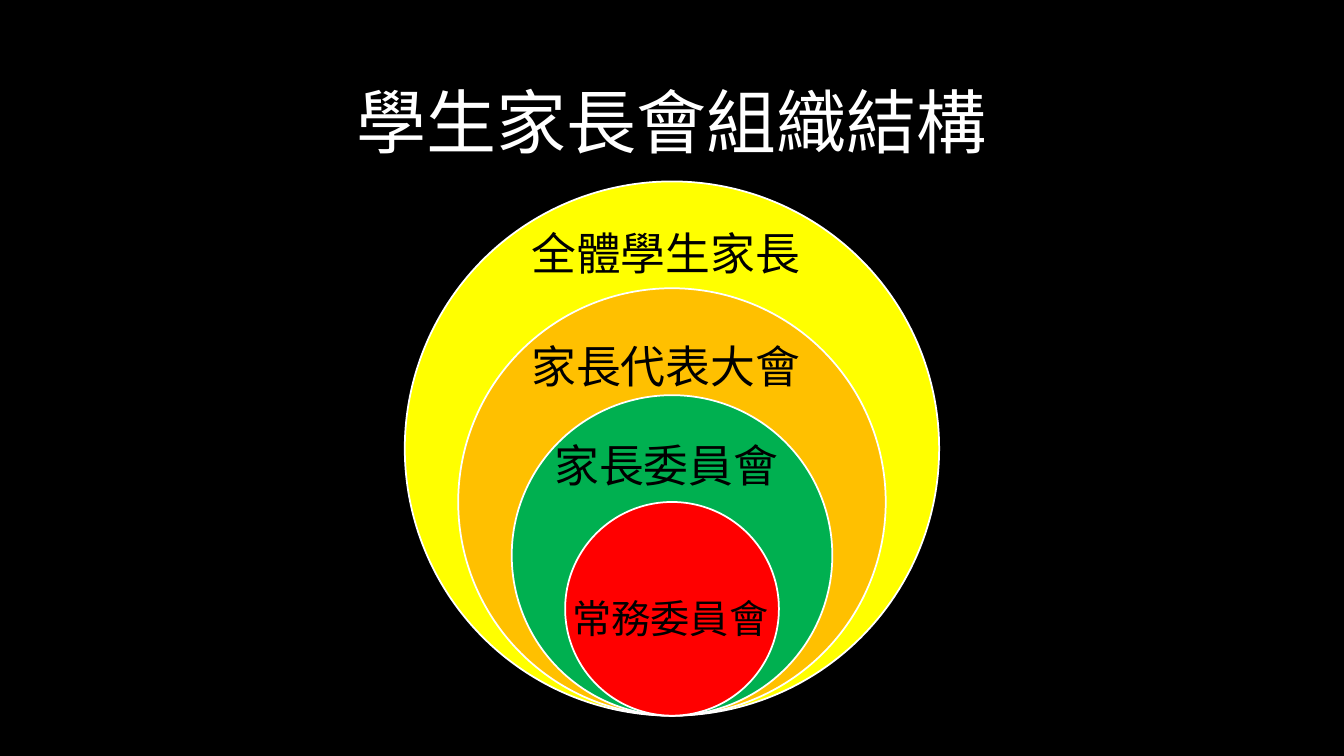
from lxml import etree
from pptx import Presentation
from pptx.dml.color import RGBColor
from pptx.enum.shapes import MSO_SHAPE
from pptx.enum.text import MSO_ANCHOR, MSO_AUTO_SIZE, PP_ALIGN
from pptx.oxml.ns import qn
from pptx.util import Inches, Pt

OVAL = MSO_SHAPE.OVAL
MIDDLE = MSO_ANCHOR.MIDDLE
CENTER = PP_ALIGN.CENTER
NO_AUTOFIT = MSO_AUTO_SIZE.NONE
GROW = MSO_AUTO_SIZE.SHAPE_TO_FIT_TEXT

BLACK = RGBColor(0x00, 0x00, 0x00)
WHITE = RGBColor(0xFF, 0xFF, 0xFF)
YELLOW = RGBColor(0xFF, 0xFF, 0x00)
ORANGE = RGBColor(0xFF, 0xC0, 0x00)
GREEN = RGBColor(0x00, 0xB0, 0x50)
RED = RGBColor(0xFF, 0x00, 0x00)
TITLE_FONT = "Noto Sans CJK SC"
LABEL_FONT = "Noto Sans CJK JP"

# Content, outermost ring first: label, ring colour, text size, label (left, top, width, height)
TITLE = "學生家長會組織結構"
RINGS = [
    ("全體學生家長", YELLOW, 32, (5.17, 2.19, 2.99, 0.64)),
    ("家長代表大會", ORANGE, 32, (5.17, 3.31, 2.99, 0.64)),
    ("家長委員會", GREEN, 32, (5.4, 4.29, 2.53, 0.64)),
    ("常務委員會", RED, 28, (5.58, 5.85, 2.17, 0.57)),
]

# Layout: circles share a centre line and a bottom edge, each one step smaller
WIDTH, HEIGHT = 13.33, 7.5
CENTER_X, BOTTOM = WIDTH / 2, 7.1
OUTER, STEP = 5.3, 1.06


def style_text(p, text, size, font, color):
    p.text = text
    r = p.runs[0]
    r.font.size = Pt(size)
    r.font.color.rgb = color
    r.font.name = font
    etree.SubElement(r.font._element, qn("a:ea")).set("typeface", font)


prs = Presentation()
prs.slide_width, prs.slide_height = Inches(WIDTH), Inches(HEIGHT)
s = prs.slides.add_slide(prs.slide_layouts[5])
s.background.fill.solid()
s.background.fill.fore_color.rgb = BLACK

# Title
title = s.shapes.title
title.left, title.top = Inches(1), Inches(0.68)
title.width, title.height = Inches(WIDTH - 2), Inches(1.13)
tf = title.text_frame
tf.auto_size = NO_AUTOFIT
tf.vertical_anchor = MIDDLE
p = tf.paragraphs[0]
style_text(p, TITLE, 50, TITLE_FONT, WHITE)
p.alignment = CENTER
p.line_spacing = 0.9

# Nested circles
group = s.shapes.add_group_shape()
for i, (_, color, _, _) in enumerate(RINGS):
    d = OUTER - i * STEP
    sp = group.shapes.add_shape(OVAL, Inches(CENTER_X - d / 2), Inches(BOTTOM - d),
                                Inches(d), Inches(d))
    sp.shadow.inherit = False
    sp.fill.solid()
    sp.fill.fore_color.rgb = color
    sp.line.color.rgb = WHITE
    sp.line.width = Pt(1.25)

# Ring labels
for label, _, size, box in RINGS:
    tf = s.shapes.add_textbox(*map(Inches, box)).text_frame
    tf.word_wrap = True
    tf.auto_size = GROW
    style_text(tf.paragraphs[0], label, size, LABEL_FONT, BLACK)

prs.save("out.pptx")
